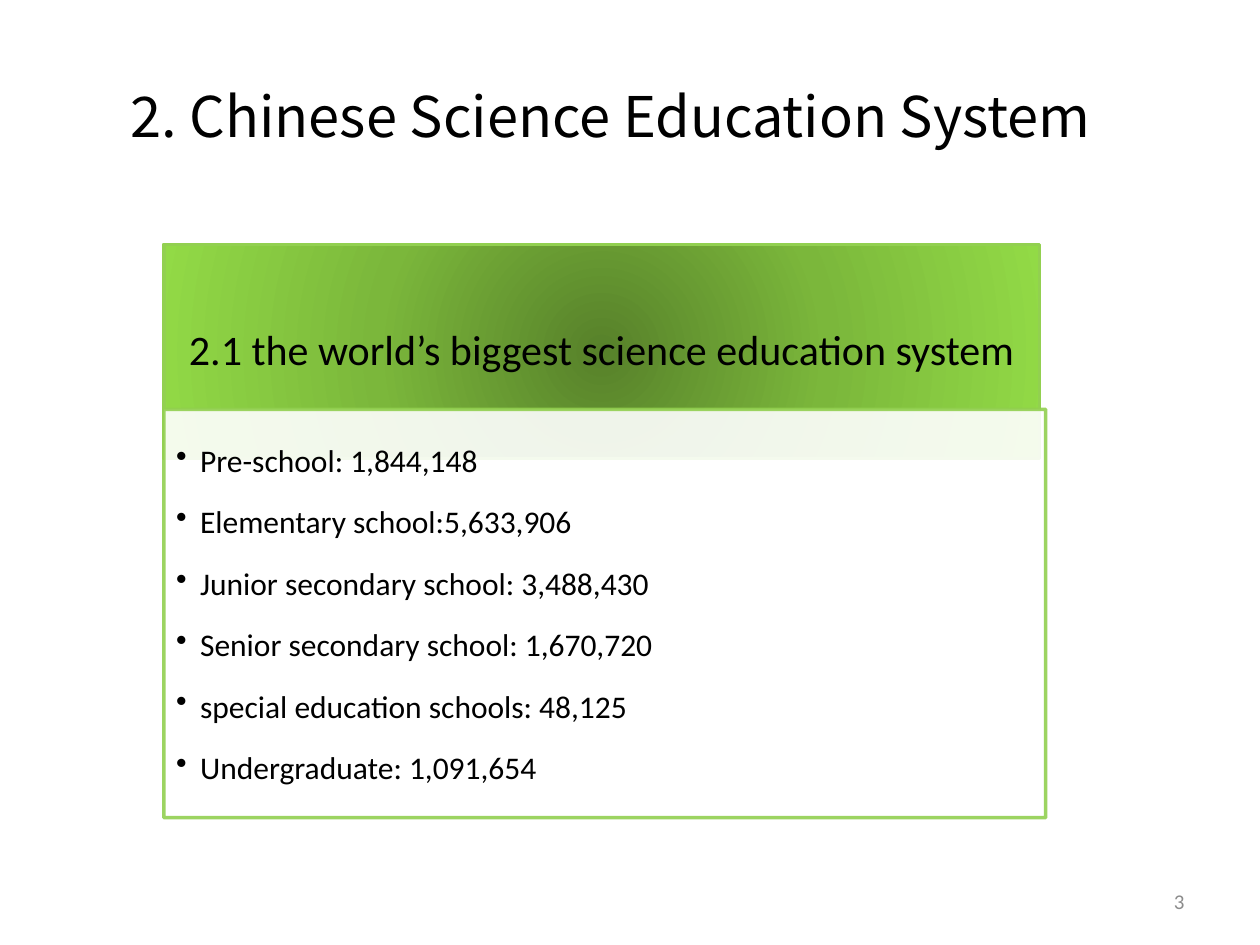
from pptx import Presentation
from pptx.dml.color import RGBColor
from pptx.enum import shapes, text
from pptx.oxml import parse_xml
from pptx.oxml.ns import nsdecls, qn
from pptx.util import Inches, Pt
from lxml import etree

TITLE = "2. Chinese Science Education System"
HEADING = "2.1 the world’s biggest science education system"
ENROLMENT = [
    "Pre-school: 1,844,148",
    "Elementary school:5,633,906",
    "Junior secondary school: 3,488,430",
    "Senior secondary school: 1,670,720",
    "special education schools: 48,125",
    "Undergraduate: 1,091,654",
]
PAGE_NUMBER = "3"
GREEN, WHITE, BLACK, GREY = "92D050", "FFFFFF", "000000", "8C8C8C"
GLOW = [(0, "57812A"), (50, "7BB73B"), (100, "92DA46")]
OPACITY = 90  # percent, list panel fill and outline
INDENT = Inches(0.19)


def color(value):
    return RGBColor.from_string(value)


def set_frame(box, anchor, insets):
    """Wrap the text, anchor it and set left, top, right, bottom insets."""
    frame = box.text_frame
    frame.word_wrap = True
    frame.vertical_anchor = anchor
    (frame.margin_left, frame.margin_top,
     frame.margin_right, frame.margin_bottom) = map(Inches, insets)
    return frame


def write(para, words, size, tint=BLACK, font="Calibri", align=text.PP_ALIGN.LEFT):
    para.alignment = align
    span = para.add_run()
    span.text = words
    span.font.size = Pt(size)
    span.font.name = font
    span.font.color.rgb = color(tint)


def add_label(slide, place, words, **style):
    box = slide.shapes.add_textbox(*map(Inches, place))
    frame = set_frame(box, text.MSO_ANCHOR.MIDDLE, (0.1, 0.05, 0.1, 0.05))
    write(frame.paragraphs[0], words, **style)


def add_panel(slide, place):
    panel = slide.shapes.add_shape(shapes.MSO_SHAPE.RECTANGLE, *map(Inches, place))
    panel.shadow.inherit = False
    panel.fill.solid()
    panel.fill.fore_color.rgb = color(WHITE)
    panel.line.color.rgb = color(GREEN)
    panel.line.width = Pt(2)
    return panel


def fill_radial(shape, stops):
    marks = "".join(
        f'<a:gs pos="{at * 1000}"><a:srgbClr val="{tint}"/></a:gs>' for at, tint in stops)
    gradient = parse_xml(
        f'<a:gradFill {nsdecls("a")}><a:gsLst>{marks}</a:gsLst><a:path path="circle">'
        '<a:fillToRect l="50000" t="50000" r="50000" b="50000"/></a:path></a:gradFill>')
    props = shape._element.spPr
    props.replace(props.find(qn("a:solidFill")), gradient)


def set_opacity(shape, percent):
    """Apply the opacity to the fill and the outline."""
    for tint in shape._element.spPr.iter(qn("a:srgbClr")):
        etree.SubElement(tint, qn("a:alpha")).set("val", str(percent * 1000))


def add_bullet(para):
    props = para._p.get_or_add_pPr()
    props.set("marL", str(INDENT))
    props.set("indent", str(-INDENT))
    etree.SubElement(props, qn("a:buChar")).set("char", "•")


def main():
    deck = Presentation()
    deck.slide_width, deck.slide_height = Inches(10), Inches(7.5)
    slide = deck.slides.add_slide(deck.slide_layouts[6])

    add_label(slide, (0.35, 0.29, 9, 1.25), TITLE, size=32,
              font="Noto Sans CJK SC", align=text.PP_ALIGN.CENTER)
    add_label(slide, (7.17, 6.95, 2.33, 0.4), PAGE_NUMBER, size=12,
              tint=GREY, align=text.PP_ALIGN.RIGHT)

    header = add_panel(slide, (1.3, 1.94, 6.95, 1.7))
    fill_radial(header, GLOW)
    frame = set_frame(header, text.MSO_ANCHOR.MIDDLE, (0.19, 0.11, 0.19, 0.11))
    para = frame.paragraphs[0]
    para.line_spacing = 0.9
    write(para, HEADING, 24, align=text.PP_ALIGN.CENTER)

    body = add_panel(slide, (1.3, 3.25, 7, 3.24))
    set_opacity(body, OPACITY)
    frame = set_frame(body, text.MSO_ANCHOR.TOP, (0.1, 0.1, 0.14, 0.16))
    for index, entry in enumerate(ENROLMENT):
        para = frame.add_paragraph() if index else frame.paragraphs[0]
        add_bullet(para)
        para.line_spacing = 1.5
        para.space_after = Pt(2.7)
        write(para, entry, 18)

    deck.save("out.pptx")


if __name__ == "__main__":
    main()
